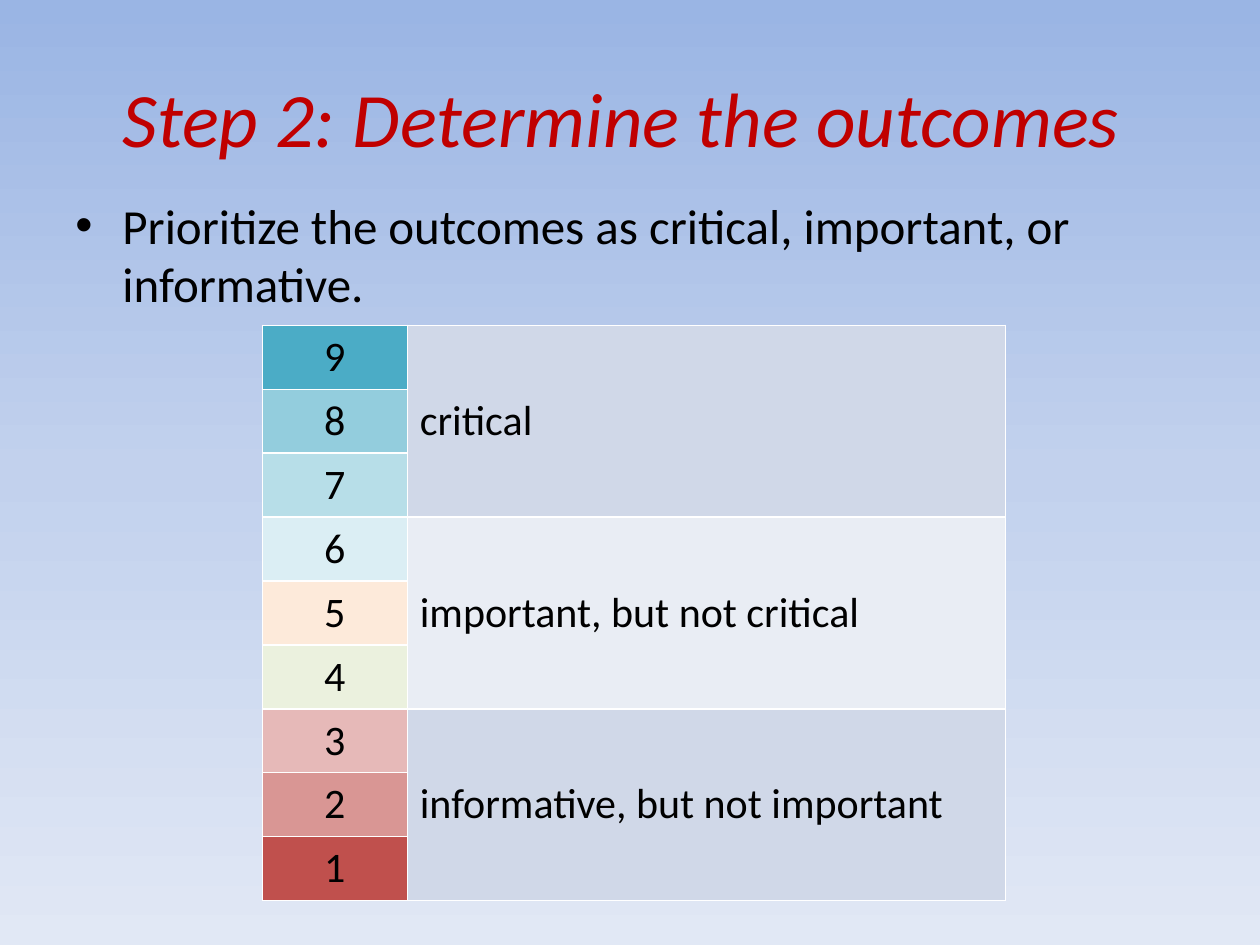
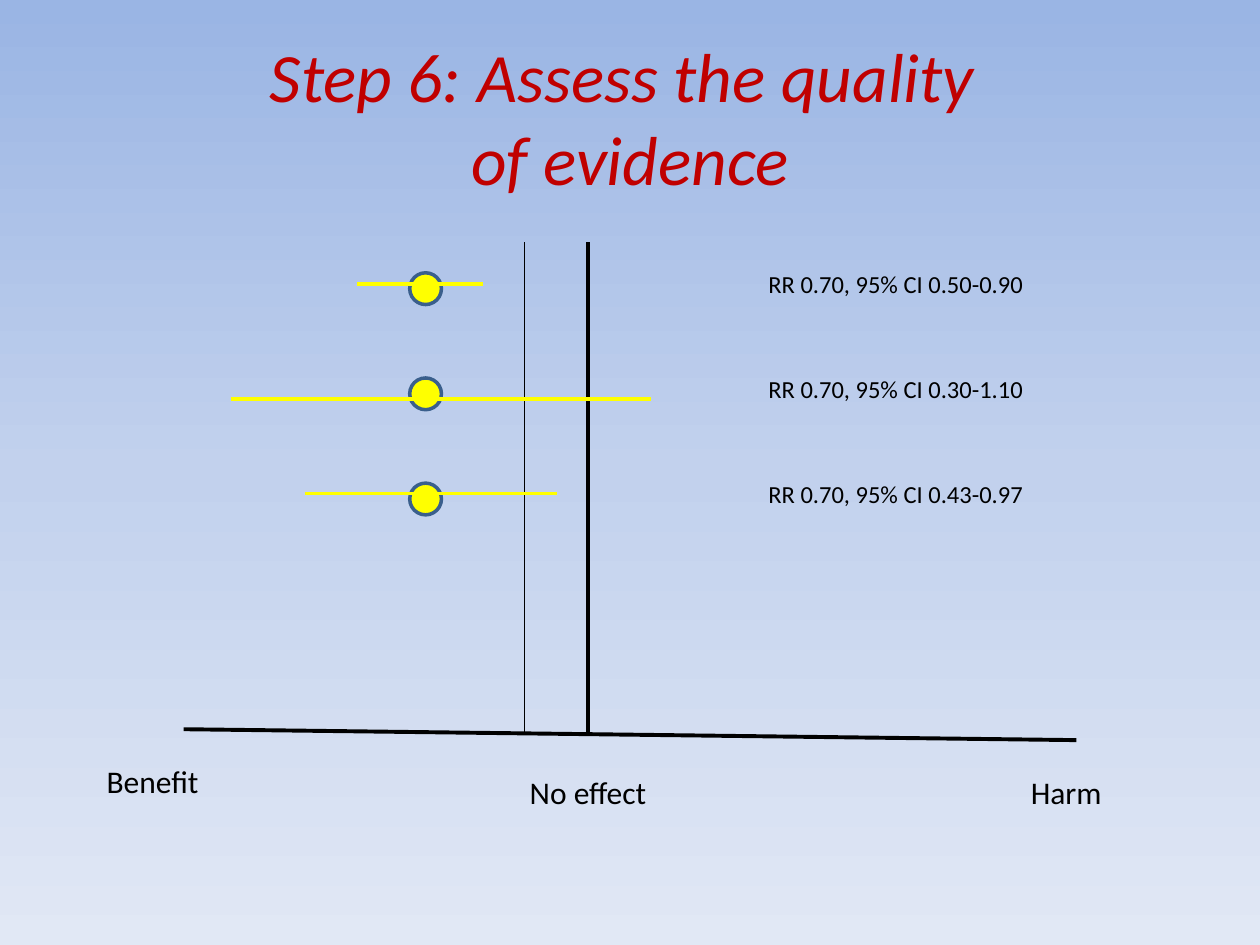
"""Build two slides on rating outcomes and assessing the quality of evidence."""

from copy import deepcopy

from lxml.etree import SubElement
from pptx import Presentation
from pptx.dml.color import RGBColor
from pptx.enum.shapes import MSO_CONNECTOR, MSO_SHAPE
from pptx.enum.text import MSO_ANCHOR, MSO_AUTO_SIZE, PP_ALIGN
from pptx.oxml.ns import qn
from pptx.util import Cm, Pt

FONT = "Calibri"
BLACK = RGBColor(0x00, 0x00, 0x00)
WHITE = RGBColor(0xFF, 0xFF, 0xFF)
TITLE_RED = RGBColor(0xC0, 0x00, 0x00)
YELLOW = RGBColor(0xFF, 0xFF, 0x00)
MARKER_OUTLINE = RGBColor(0x3A, 0x5F, 0x8C)
BAND_DARK = RGBColor(0xD0, 0xD8, 0xE8)
BAND_LIGHT = RGBColor(0xE9, 0xED, 0xF4)
SKY = [RGBColor(0x9A, 0xB5, 0xE4), RGBColor(0xC2, 0xD1, 0xED), RGBColor(0xE1, 0xE8, 0xF5)]
SCORE_COLOURS = [
    RGBColor(0x4B, 0xAC, 0xC6),
    RGBColor(0x93, 0xCD, 0xDD),
    RGBColor(0xB7, 0xDE, 0xE8),
    RGBColor(0xDB, 0xEE, 0xF4),
    RGBColor(0xFD, 0xEA, 0xDA),
    RGBColor(0xEB, 0xF1, 0xDE),
    RGBColor(0xE6, 0xB9, 0xB8),
    RGBColor(0xD9, 0x96, 0x94),
    RGBColor(0xC0, 0x50, 0x4D),
]
PRIORITIES = [
    ("critical", BAND_DARK),
    ("important, but not critical", BAND_LIGHT),
    ("informative, but not important", BAND_DARK),
]
SCORES_PER_PRIORITY = 3
STUDIES = [
    ("RR 0.70, 95% CI 0.50-0.90", 7.2, 9.74, 5.72),
    ("RR 0.70, 95% CI 0.30-1.10", 4.66, 13.12, 8.05),
    ("RR 0.70, 95% CI 0.43-0.97", 6.14, 11.22, 9.95),
]
AXIS_LABELS = [
    ("Benefit", 1.9, 15.24, 4.02, PP_ALIGN.LEFT),
    ("Harm", 20.53, 15.45, 2.33, PP_ALIGN.LEFT),
    ("No effect", 9.53, 15.45, 4.65, PP_ALIGN.CENTER),
]


def set_background(master):
    """Give the slide master a vertical gradient of three colours."""
    fill = master.background.fill
    fill.gradient()
    fill.gradient_angle = 270
    stop_list = next(master.element.iter(qn("a:gsLst")))
    stop_list.insert(1, deepcopy(stop_list[0]))
    for index, (stop, colour) in enumerate(zip(fill.gradient_stops, SKY)):
        stop.color.rgb = colour
        stop.position = index / (len(SKY) - 1)


def add_run(paragraph, text, size, colour=BLACK, italic=False):
    """Add one formatted run to a paragraph."""
    run = paragraph.add_run()
    run.text = text
    run.font.name = FONT
    run.font.size = Pt(size)
    run.font.color.rgb = colour
    run.font.italic = italic


def add_titled_slide(presentation, title_lines, size):
    """Add a title-only slide with its title in red italics."""
    slide = presentation.slides.add_slide(presentation.slide_layouts[5])
    title = slide.shapes.title
    title.left, title.top, title.width, title.height = Cm(1.27), Cm(0.76), Cm(22.86), Cm(3.18)
    frame = title.text_frame
    frame.auto_size = MSO_AUTO_SIZE.NONE
    frame.vertical_anchor = MSO_ANCHOR.MIDDLE
    paragraph = frame.paragraphs[0]
    paragraph.alignment = PP_ALIGN.CENTER
    for index, line in enumerate(title_lines):
        if index:
            paragraph.add_line_break()
        add_run(paragraph, line, size, TITLE_RED, italic=True)
    return slide


def add_text(slide, text, left, top, width, height, size, alignment=PP_ALIGN.LEFT):
    """Add a wrapped text box and return its paragraph."""
    box = slide.shapes.add_textbox(Cm(left), Cm(top), Cm(width), Cm(height))
    box.text_frame.word_wrap = True
    paragraph = box.text_frame.paragraphs[0]
    paragraph.alignment = alignment
    add_run(paragraph, text, size)
    return paragraph


def add_bullet(paragraph, indent):
    """Turn a paragraph into a bullet point with a hanging indent."""
    paragraph.space_before = Pt(5.6)
    properties = paragraph._p.get_or_add_pPr()
    properties.set("marL", str(Cm(indent)))
    properties.set("indent", str(-Cm(indent)))
    SubElement(properties, qn("a:buFont"), typeface="Arial")
    SubElement(properties, qn("a:buChar"), char="•")


def add_line(slide, start, end, colour, width):
    """Draw a straight line without a shadow."""
    points = [Cm(length) for length in (*start, *end)]
    line = slide.shapes.add_connector(MSO_CONNECTOR.STRAIGHT, *points)
    line.line.color.rgb = colour
    line.line.width = Pt(width)
    SubElement(line._element.spPr, qn("a:effectLst"))


def add_marker(slide, left, top):
    """Draw the round marker of a point estimate."""
    marker = slide.shapes.add_shape(MSO_SHAPE.OVAL, Cm(left), Cm(top), Cm(0.64), Cm(0.64))
    marker.shadow.inherit = False
    marker.fill.solid()
    marker.fill.fore_color.rgb = YELLOW
    marker.line.color.rgb = MARKER_OUTLINE
    marker.line.width = Pt(2)


def format_cell(cell, colour):
    """Fill a cell and give it thin white borders."""
    properties = cell._tc.get_or_add_tcPr()
    for side in ("a:lnL", "a:lnR", "a:lnT", "a:lnB"):
        border = SubElement(properties, qn(side), w=str(Pt(1)))
        border_fill = SubElement(border, qn("a:solidFill"))
        SubElement(border_fill, qn("a:srgbClr"), val=str(WHITE))
    cell.fill.solid()
    cell.fill.fore_color.rgb = colour
    cell.vertical_anchor = MSO_ANCHOR.MIDDLE


def add_priority_table(slide):
    """Add the table that sorts scores from 9 to 1 into priorities."""
    row_count = len(SCORE_COLOURS)
    frame = slide.shapes.add_table(row_count, 2, Cm(5.29), Cm(6.56), Cm(14.98), Cm(11.6))
    table = frame.table
    table.first_row = False
    table.horz_banding = False
    table.columns[0].width, table.columns[1].width = Cm(2.92), Cm(12.06)
    for row, score_colour in enumerate(SCORE_COLOURS):
        label, band_colour = PRIORITIES[row // SCORES_PER_PRIORITY]
        score_cell, label_cell = table.cell(row, 0), table.cell(row, 1)
        format_cell(score_cell, score_colour)
        format_cell(label_cell, band_colour)
        paragraph = score_cell.text_frame.paragraphs[0]
        paragraph.alignment = PP_ALIGN.CENTER
        add_run(paragraph, str(row_count - row), 24)
        if row % SCORES_PER_PRIORITY == 0:
            label_cell.merge(table.cell(row + SCORES_PER_PRIORITY - 1, 1))
            add_run(label_cell.text_frame.paragraphs[0], label, 24)


def add_forest_plot(slide):
    """Draw the axes, the labels and one row for each study."""
    add_line(slide, (11.86, 4.88), (11.86, 14.81), BLACK, 2.25)
    add_line(slide, (10.58, 4.88), (10.58, 14.81), BLACK, 0.75)
    add_line(slide, (3.7, 14.7), (21.7, 14.92), BLACK, 2.25)
    for label, left, top, width, alignment in AXIS_LABELS:
        add_text(slide, label, left, top, width, 1.02, 18, alignment)
    for index, (label, lower, upper, height) in enumerate(STUDIES):
        top = 5.5 + 2.12 * index
        add_marker(slide, 8.26, top)
        add_line(slide, (lower, height), (upper, height), YELLOW, 2.25)
        add_text(slide, label, 15.24, top - 0.21, 8.69, 0.86, 14)


def main():
    """Build and save the presentation."""
    presentation = Presentation()
    presentation.slide_width, presentation.slide_height = Cm(25.4), Cm(19.05)
    set_background(presentation.slide_master)

    outcomes = add_titled_slide(presentation, ["Step 2: Determine the outcomes "], 44)
    sentence = "Prioritize the outcomes as critical, important, or informative."
    add_bullet(add_text(outcomes, sentence, 1.27, 3.81, 22.86, 2.97, 28), 0.95)
    add_priority_table(outcomes)

    evidence = add_titled_slide(
        presentation, ["Step 6: Assess the quality ", "of evidence"], 39.6
    )
    add_forest_plot(evidence)
    presentation.save("out.pptx")


if __name__ == "__main__":
    main()
